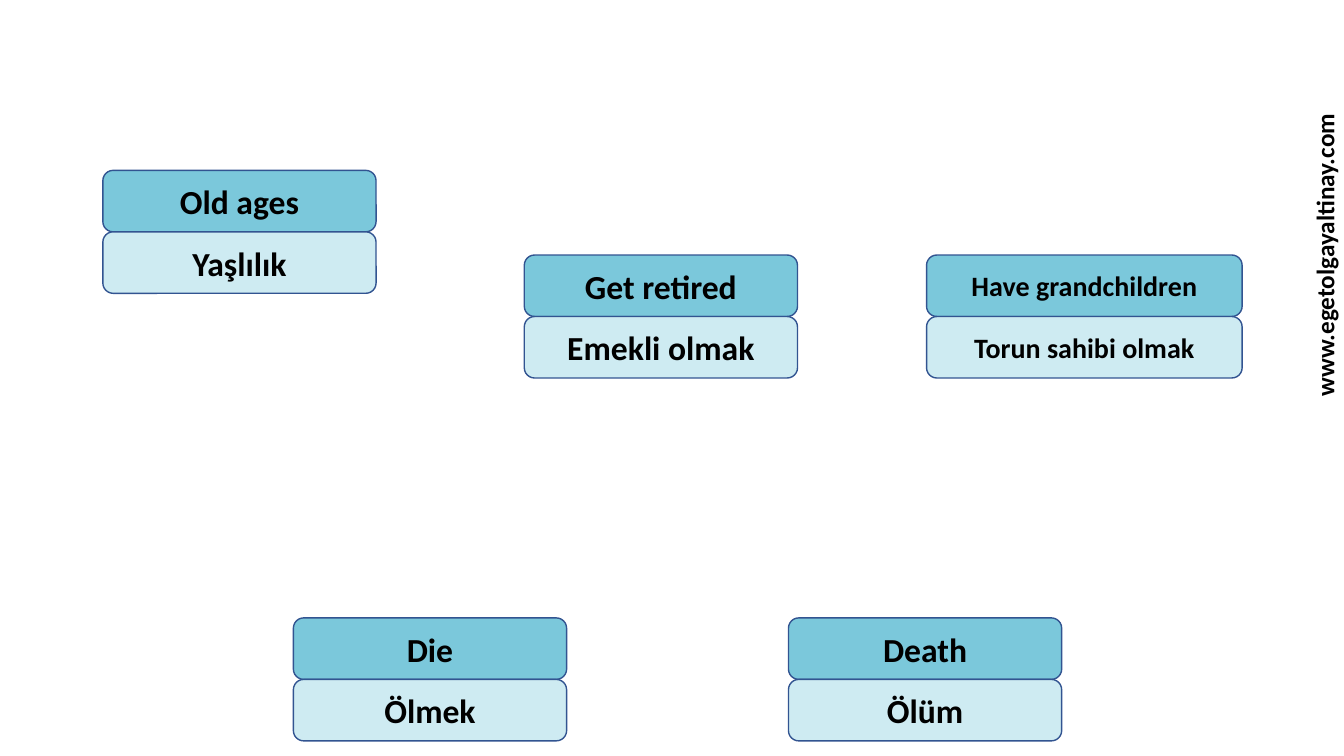
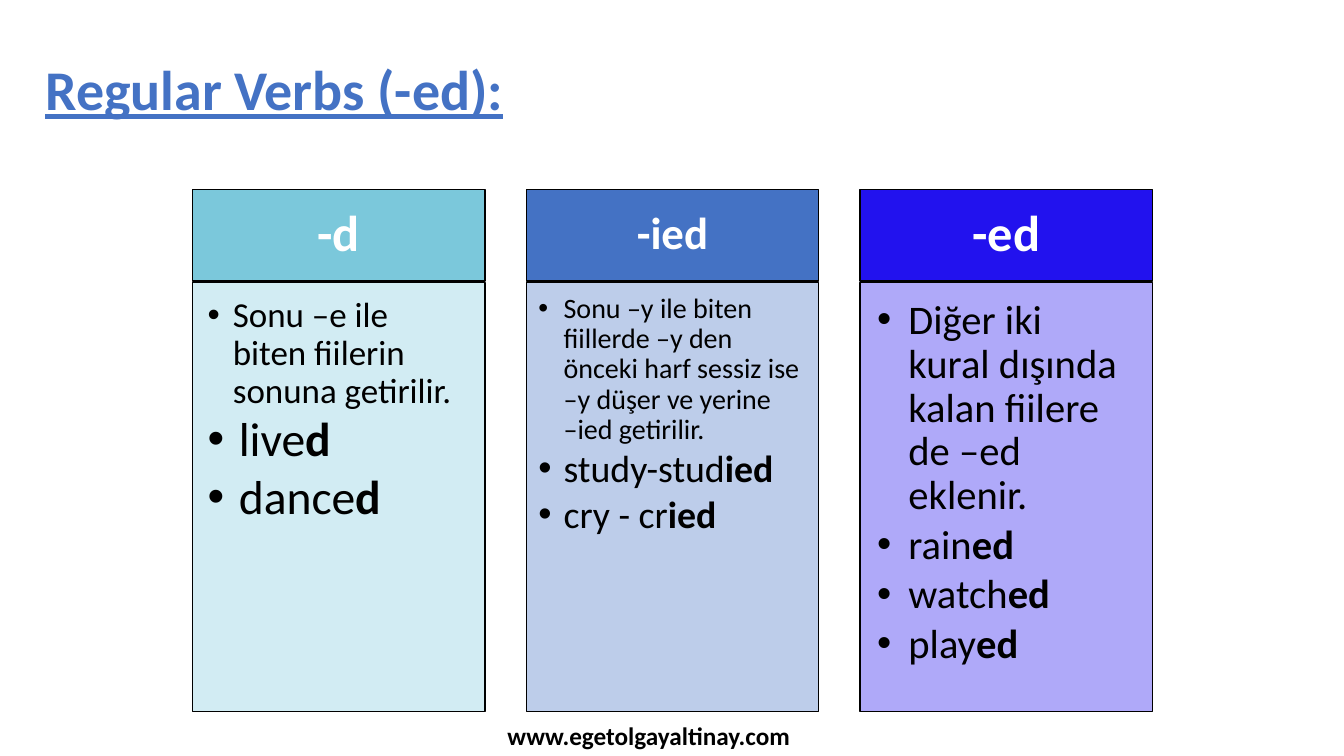
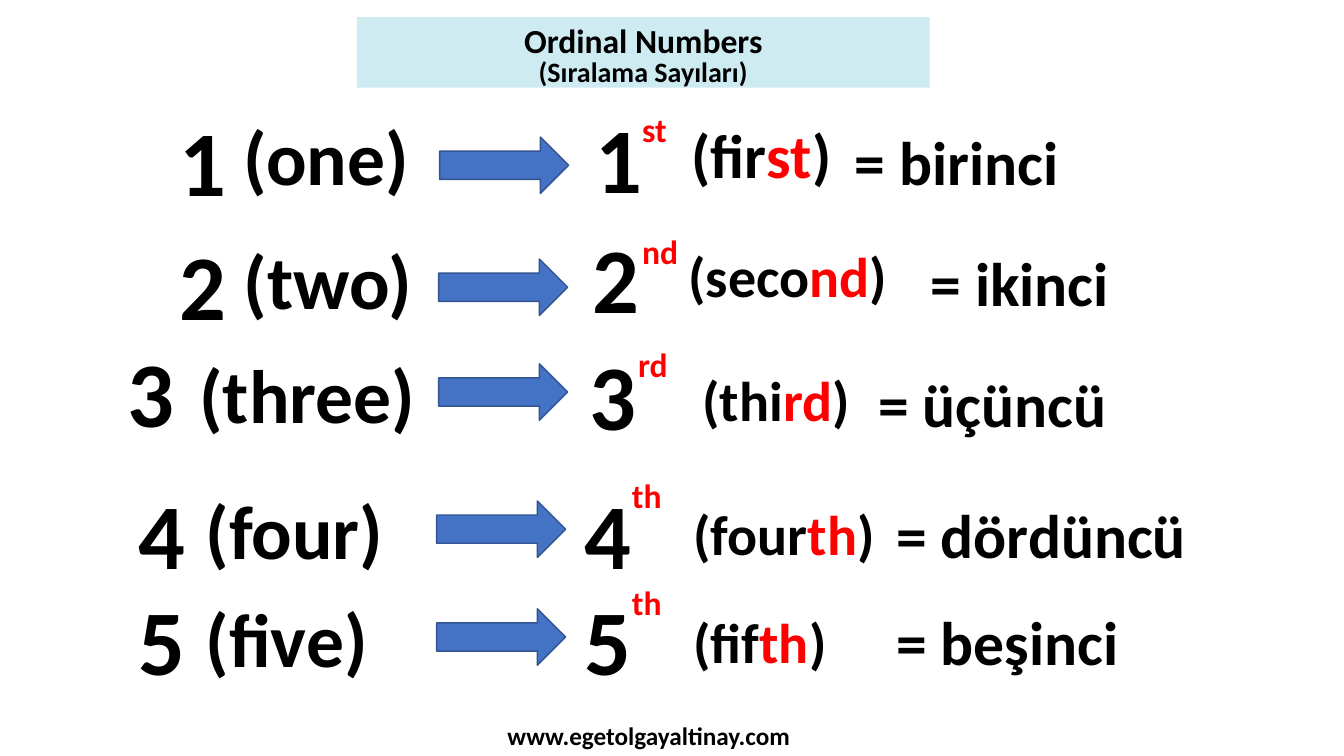
"""Build three English lesson slides: life stages, regular verbs and ordinal numbers."""
from dataclasses import dataclass

from lxml import etree
from pptx import Presentation
from pptx.dml.color import RGBColor
from pptx.enum.shapes import MSO_SHAPE
from pptx.enum.text import MSO_ANCHOR, MSO_AUTO_SIZE, PP_ALIGN
from pptx.oxml.ns import qn
from pptx.util import Inches, Pt

RECT, ROUND, ARROW = MSO_SHAPE.RECTANGLE, MSO_SHAPE.ROUNDED_RECTANGLE, MSO_SHAPE.RIGHT_ARROW
LEFT, CENTER = PP_ALIGN.LEFT, PP_ALIGN.CENTER
TOP, MIDDLE = MSO_ANCHOR.TOP, MSO_ANCHOR.MIDDLE
GROW, FIXED = MSO_AUTO_SIZE.SHAPE_TO_FIT_TEXT, MSO_AUTO_SIZE.NONE
TITLE_ONLY, BLANK = 5, 6


@dataclass(frozen=True)
class Theme:
    font: str = "Calibri"
    black: str = "000000"
    white: str = "FFFFFF"
    red: str = "FF0000"
    blue: str = "4472C4"
    outline: str = "325491"
    teal: str = "7BC8DB"
    pale_teal: str = "CEEBF2"
    pale_blue: str = "B6C8E8"
    violet: str = "2212EE"
    pale_violet: str = "AFA9F9"
    title: int = 40
    digit: int = 66
    word: int = 54
    meaning: int = 44
    spelling: int = 40
    label: int = 24
    small_label: int = 20
    site: int = 18


T = Theme()
SITE = "www.egetolgayaltinay.com"
SITE_SIZE = (4.43, 0.4)


def add(slide, x, y, w, h, kind=None, fill=None, line=None):
    at = [Inches(v) for v in (x, y, w, h)]
    if kind is None:
        sp = slide.shapes.add_textbox(*at)
        sp.text_frame.word_wrap = True
        sp.text_frame.auto_size = GROW
        return sp
    sp = slide.shapes.add_shape(kind, *at)
    sp.shadow.inherit = False
    sp.fill.solid()
    sp.fill.fore_color.rgb = RGBColor.from_string(fill)
    sp.line.color.rgb = RGBColor.from_string(line)
    sp.line.width = Pt(1)
    return sp


def write(sp, text, size, color=T.black, bold=True, mark=None, align=LEFT,
          spacing=1.0, after=0, bullet=None, underline=False):
    """Add one paragraph; every second part between bars is bold in the mark colour."""
    tf = sp.text_frame
    p = tf.paragraphs[0] if not tf.text else tf.add_paragraph()
    if bullet:
        pPr = p._p.get_or_add_pPr()
        pPr.set("marL", str(Inches(bullet)))
        pPr.set("indent", str(-Inches(bullet)))
        etree.SubElement(pPr, qn("a:buFont")).set("typeface", "Arial")
        etree.SubElement(pPr, qn("a:buChar")).set("char", "•")
    p.alignment, p.line_spacing = align, spacing
    p.space_before, p.space_after = Pt(0), Pt(after)
    for i, part in enumerate(text.split("|")):
        if part == "\n":
            p.add_line_break()
        elif part:
            r = p.add_run()
            r.text = part
            r.font.name, r.font.size = T.font, Pt(size)
            r.font.bold = bold or i % 2 == 1
            r.font.underline = underline
            r.font.color.rgb = RGBColor.from_string(mark if mark and i % 2 else color)


prs = Presentation()
prs.slide_width, prs.slide_height = Inches(13.33), Inches(7.5)

stages = prs.slides.add_slide(prs.slide_layouts[BLANK])
for x, y, w, size, *words in [
    (1.02, 1.69, 2.71, T.label, "Old ages", "Yaşlılık"),
    (5.2, 2.53, 2.71, T.label, "Get retired", "Emekli olmak"),
    (9.19, 2.53, 3.13, T.small_label, "Have grandchildren", "Torun sahibi olmak"),
    (2.91, 6.13, 2.71, T.label, "Die", "Ölmek"),
    (7.82, 6.13, 2.71, T.label, "Death", "Ölüm"),
]:
    for i, (word, fill) in enumerate(zip(words, (T.teal, T.pale_teal))):
        sp = add(stages, x, y + i * 0.61, w, 0.61, ROUND, fill, T.outline)
        write(sp, word, size, align=CENTER)

verbs = prs.slides.add_slide(prs.slide_layouts[TITLE_ONLY])
title = verbs.shapes.title
title.left, title.top, title.width, title.height = [Inches(v) for v in (0.35, 0.39, 6.94, 1.06)]
title.text_frame.auto_size = FIXED
title.text_frame.vertical_anchor = MIDDLE
write(title, "Regular Verbs (-ed):", T.title, T.blue, spacing=0.9, underline=True)

endings = [
    ("-d", 36, T.teal, T.pale_teal, 90, (0.15, 0.15, 0.19, 0.22), [
        ("Sonu –e ile biten fiilerin sonuna getirilir.", 25, 0.25),
        ("live|d", 34, 0.31),
        ("dance|d", 34, 0.31),
    ]),
    ("-ied", 32, T.blue, T.pale_blue, 90, (0.12, 0.12, 0.16, 0.17), [
        ("Sonu –y ile biten fiillerde –y den önceki harf sessiz ise "
         "–y düşer ve yerine |\n|–ied getirilir.", 20, 0.25),
        ("study-stud|ied", 27, 0.25),
        ("cry - cr|ied", 27, 0.25),
    ]),
    ("-ed", 36, T.violet, T.pale_violet, 100, (0.17, 0.17, 0.23, 0.25), [
        ("Diğer iki kural dışında kalan fiilere de –ed eklenir.", 29, 0.31),
        ("rain|ed", 29, 0.31),
        ("watch|ed", 29, 0.31),
        ("play|ed", 29, 0.31),
    ]),
]
for i, (ending, size, fill, pale, opacity, insets, rules) in enumerate(endings):
    x = 1.91 + i * 3.31
    head = add(verbs, x, 1.88, 2.9, 0.91, RECT, fill, T.black)
    write(head, ending, size, T.white, align=CENTER, spacing=0.9)
    body = add(verbs, x, 2.8, 2.9, 4.26, RECT, pale, T.black)
    if opacity < 100:
        rgb = body.fill._xPr.find(qn("a:solidFill"))[0]
        etree.SubElement(rgb, qn("a:alpha")).set("val", str(opacity * 1000))
    tf = body.text_frame
    tf.vertical_anchor = TOP
    tf.margin_left, tf.margin_top, tf.margin_right, tf.margin_bottom = [Inches(v) for v in insets]
    for text, size, indent in rules:
        write(body, text, size, bold=False, spacing=0.9, after=size * 0.14, bullet=indent)

ordinals = prs.slides.add_slide(prs.slide_layouts[TITLE_ONLY])
band = ordinals.shapes.title
band.left, band.top, band.width, band.height = [Inches(v) for v in (3.54, 0.17, 5.68, 0.7)]
band.fill.solid()
band.fill.fore_color.rgb = RGBColor.from_string(T.pale_teal)
tf = band.text_frame
tf.auto_size, tf.vertical_anchor = FIXED, TOP
tf.margin_top = tf.margin_bottom = Inches(0.03)
write(band, "Ordinal Numbers", T.label, align=CENTER)
write(band, "(Sıralama Sayıları)", T.small_label, align=CENTER, spacing=0.82)

part_styles = [
    (2.02, 1.21, T.digit, T.black),
    (4.29, 1.01, T.word, T.black),
    (1.91, 1.21, T.digit, T.black),
    (1.44, 0.5, T.label, T.red),
    (4.24, 0.77, T.spelling, T.black),
    (3.95, 0.84, T.meaning, T.black),
]
numbers = [
    ((4.36, 1.36), [("1", 1.68, 0.98), ("(one)", 2.32, 1.04), ("1", 5.81, 0.95),
                    ("st", 6.27, 1.03), ("(fir|st|)", 6.76, 1.11), ("= birinci", 8.38, 1.18)]),
    ((4.35, 2.57), [("2", 1.68, 2.21), ("(two)", 2.32, 2.27), ("2", 5.78, 2.14),
                    ("nd", 6.27, 2.24), ("(seco|nd|)", 6.73, 2.35), ("= ikinci", 9.13, 2.38)]),
    ((4.35, 3.61), [("3", 1.17, 3.28), ("(three)", 1.88, 3.4), ("3", 5.75, 3.31),
                    ("rd", 6.23, 3.36), ("(thi|rd|)", 6.87, 3.58), ("= üçüncü", 8.61, 3.58)]),
    ((4.33, 4.97), [("4", 1.28, 4.68), ("(four)", 1.94, 4.75), ("4", 5.7, 4.68),
                    ("th", 6.17, 4.66), ("(four|th|)", 6.78, 4.91), ("= dördüncü", 8.79, 4.88)]),
    ((4.33, 6.04), [("5", 1.28, 5.74), ("(five)", 1.94, 5.82), ("5", 5.7, 5.74),
                    ("th", 6.17, 5.72), ("(fif|th|)", 6.78, 5.98), ("= beşinci", 8.79, 5.94)]),
]
for arrow_at, parts in numbers:
    add(ordinals, *arrow_at, 1.28, 0.56, ARROW, T.blue, T.outline)
    for (text, x, y), (w, h, size, color) in zip(parts, part_styles):
        if text == "(fir|st|)":
            h, size = 0.84, T.meaning
        write(add(ordinals, x, y, w, h), text, size, color, mark=T.red)

for slide, x, y, turn in [(stages, 10.92, 2.33, 270), (verbs, 4.22, 7.1, 0), (ordinals, 4.22, 7.1, 0)]:
    sp = add(slide, x, y, *SITE_SIZE)
    sp.rotation = turn
    write(sp, SITE, T.site, align=CENTER)

prs.save("out.pptx")
